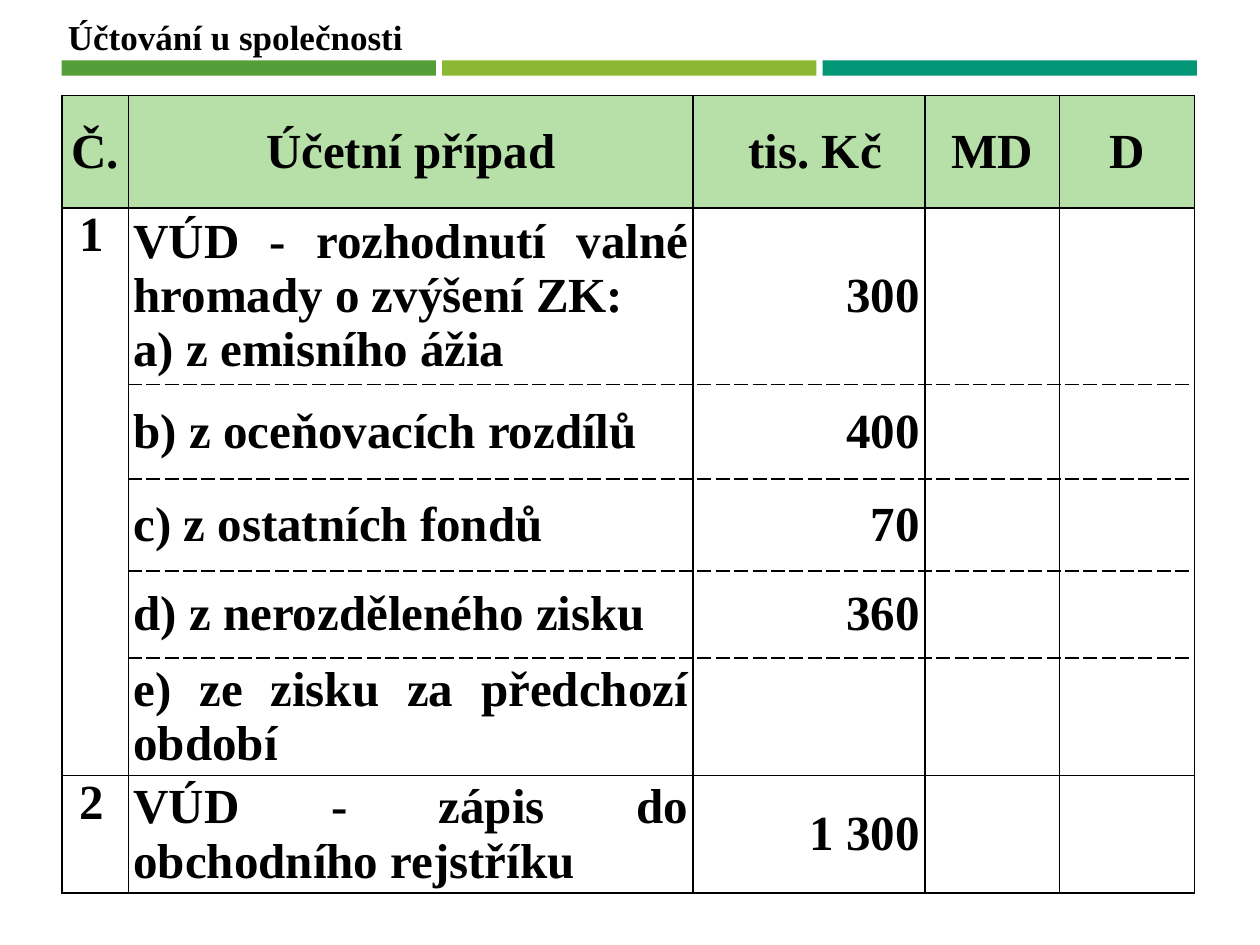
from lxml import etree
from pptx import Presentation
from pptx.dml.color import RGBColor
from pptx.enum.shapes import MSO_SHAPE
from pptx.enum.text import MSO_ANCHOR, MSO_AUTO_SIZE, PP_ALIGN
from pptx.oxml.ns import qn
from pptx.util import Inches, Pt

RECTANGLE = MSO_SHAPE.RECTANGLE
TOP, MIDDLE = MSO_ANCHOR.TOP, MSO_ANCHOR.MIDDLE
FIT_SHAPE = MSO_AUTO_SIZE.SHAPE_TO_FIT_TEXT
LEFT, CENTER, RIGHT, JUSTIFY = PP_ALIGN.LEFT, PP_ALIGN.CENTER, PP_ALIGN.RIGHT, PP_ALIGN.JUSTIFY

THEME = {
    "font": "Times New Roman",
    "title_size": 20,
    "table_size": 28,
    "text": "000000",
    "border": "000000",
    "header": "B7E0A8",
    "bars": ["549E39", "8AB833", "029676"],
}

TITLE = "Účtování u společnosti"
HEADER = ["Č.", "Účetní případ", "tis. Kč", "MD", "D"]
ENTRIES = [
    ("1", "VÚD - rozhodnutí valné hromady o zvýšení ZK:\na) z emisního ážia", "300"),
    ("", "b) z oceňovacích rozdílů", "400"),
    ("", "c) z ostatních fondů", "70"),
    ("", "d) z nerozděleného zisku", "360"),
    ("", "e) ze zisku za předchozí období", ""),
    ("2", "VÚD - zápis do obchodního rejstříku", "1 300"),
]
COLUMN_WIDTHS = [0.53, 4.48, 1.84, 1.07, 1.07]
ROW_HEIGHTS = [0.89, 1.4, 0.75, 0.73, 0.69, 0.93, 0.93]
COLUMN_ALIGNMENTS = [LEFT, JUSTIFY, RIGHT, LEFT, LEFT]
FIRST_PART, LAST_PART = 1, 5
TABLE_LEFT, TABLE_TOP = 0.49, 0.76
BAR_TOP, BAR_WIDTH, BAR_HEIGHT, BAR_STEP = 0.48, 2.97, 0.12, 3.02
CELL_INSET, SHIFTED_INSET = 0.04, 0.14


def style_paragraph(paragraph, size, alignment=LEFT):
    paragraph.alignment = alignment
    paragraph.font.name = THEME["font"]
    paragraph.font.size = Pt(size)
    paragraph.font.bold = True
    paragraph.font.color.rgb = RGBColor.from_string(THEME["text"])


def add_bars(slide):
    for index, color in enumerate(THEME["bars"]):
        bar = slide.shapes.add_shape(
            RECTANGLE, Inches(TABLE_LEFT + index * BAR_STEP), Inches(BAR_TOP),
            Inches(BAR_WIDTH), Inches(BAR_HEIGHT))
        bar.shadow.inherit = False
        bar.fill.solid()
        bar.fill.fore_color.rgb = RGBColor.from_string(color)
        bar.line.fill.background()


def add_title(slide):
    box = slide.shapes.add_textbox(Inches(0.44), Inches(0.07), Inches(2.88), Inches(0.44))
    box.text_frame.word_wrap = False
    box.text_frame.auto_size = FIT_SHAPE
    box.text_frame.text = TITLE
    style_paragraph(box.text_frame.paragraphs[0], THEME["title_size"])


def set_borders(cell, dashed_sides):
    properties = cell._tc.get_or_add_tcPr()
    for side in "LRTB":
        line = etree.SubElement(properties, qn(f"a:ln{side}"), w=str(Pt(1)))
        fill = etree.SubElement(line, qn("a:solidFill"))
        etree.SubElement(fill, qn("a:srgbClr"), val=THEME["border"])
        dash = "dash" if side in dashed_sides else "solid"
        etree.SubElement(line, qn("a:prstDash"), val=dash)


def dashed_sides(row, column):
    if column == 0:
        return ""
    top = "T" if FIRST_PART < row <= LAST_PART else ""
    bottom = "B" if FIRST_PART <= row < LAST_PART else ""
    return top + bottom


def fill_cell(cell, text, row, column):
    is_header = row == 0
    is_number = column == 0 and not is_header
    is_shifted = is_number or (is_header and column == 2)
    set_borders(cell, dashed_sides(row, column))
    if is_header:
        cell.fill.solid()
        cell.fill.fore_color.rgb = RGBColor.from_string(THEME["header"])
    else:
        cell.fill.background()
    cell.margin_left = Inches(SHIFTED_INSET if is_shifted else CELL_INSET)
    cell.margin_right = Inches(CELL_INSET)
    cell.margin_top = cell.margin_bottom = 0
    cell.vertical_anchor = TOP if is_number else MIDDLE
    cell.text_frame.text = text
    for paragraph in cell.text_frame.paragraphs:
        style_paragraph(paragraph, THEME["table_size"],
                        CENTER if is_header else COLUMN_ALIGNMENTS[column])


def add_entries_table(slide):
    rows = [HEADER] + [[*entry, "", ""] for entry in ENTRIES]
    table = slide.shapes.add_table(
        len(rows), len(HEADER), Inches(TABLE_LEFT), Inches(TABLE_TOP),
        Inches(sum(COLUMN_WIDTHS)), Inches(sum(ROW_HEIGHTS))).table
    table.first_row = table.horz_banding = False
    for column, width in zip(table.columns, COLUMN_WIDTHS):
        column.width = Inches(width)
    for row, height in zip(table.rows, ROW_HEIGHTS):
        row.height = Inches(height)
    for row_index, texts in enumerate(rows):
        for column_index, text in enumerate(texts):
            fill_cell(table.cell(row_index, column_index), text, row_index, column_index)
    table.cell(FIRST_PART, 0).merge(table.cell(LAST_PART, 0))


def main():
    presentation = Presentation()
    presentation.slide_width = Inches(10)
    presentation.slide_height = Inches(7.5)
    slide = presentation.slides.add_slide(presentation.slide_layouts[6])
    add_bars(slide)
    add_title(slide)
    add_entries_table(slide)
    presentation.save("out.pptx")


if __name__ == "__main__":
    main()
